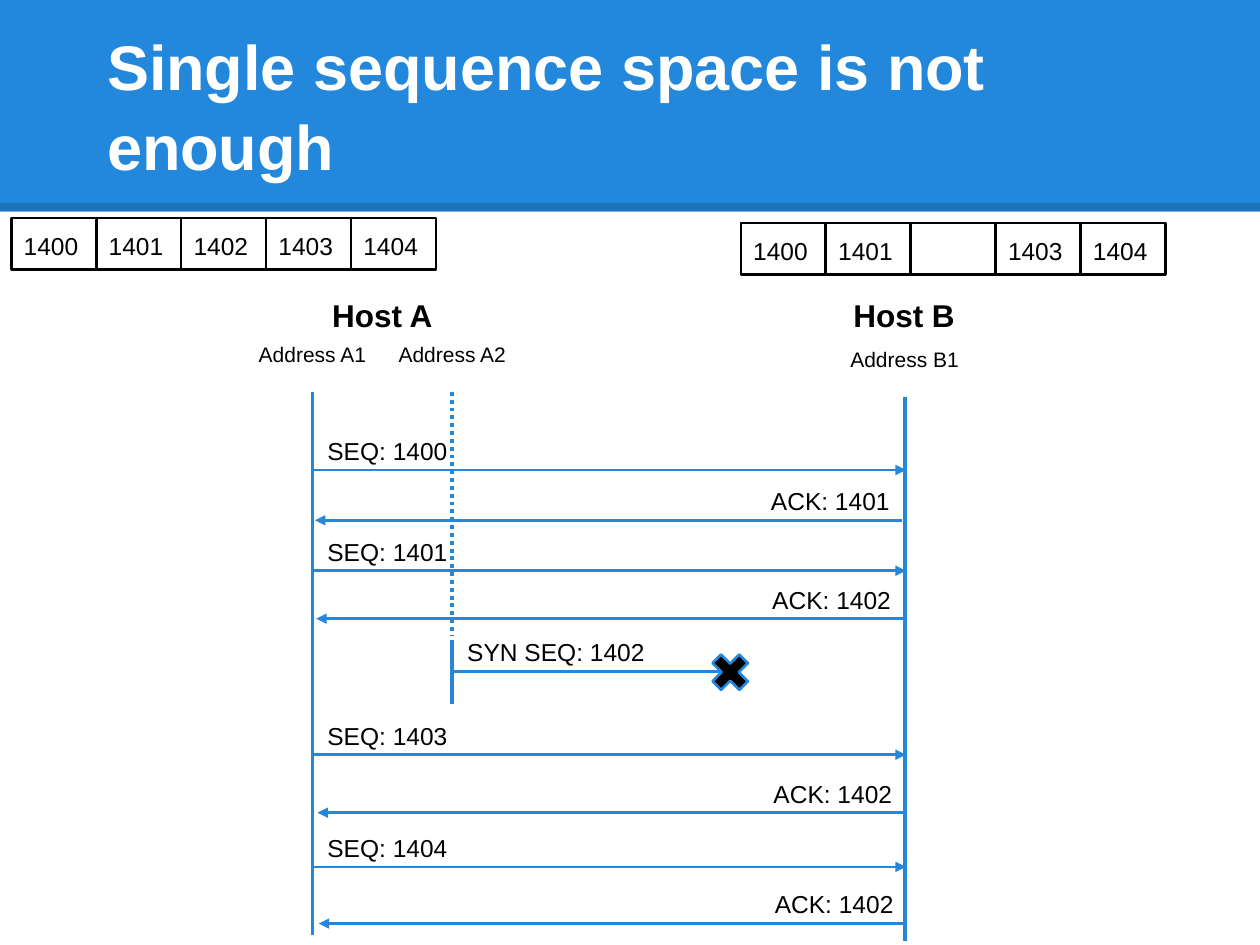
from dataclasses import dataclass

from lxml.etree import SubElement
from pptx import Presentation
from pptx.dml.color import RGBColor
from pptx.enum.dml import MSO_LINE
from pptx.enum.shapes import MSO_CONNECTOR, MSO_SHAPE
from pptx.enum.text import MSO_ANCHOR as Anchor, PP_ALIGN as Align
from pptx.oxml.ns import qn
from pptx.util import Inches, Pt


@dataclass(frozen=True)
class Theme:
    font: str = "Arial"
    blue: RGBColor = RGBColor(0x23, 0x88, 0xDB)
    black: RGBColor = RGBColor(0, 0, 0)
    white: RGBColor = RGBColor(255, 255, 255)
    title: int = 36
    host: int = 18
    message: int = 14
    address: int = 12
    thick: float = 2.25
    thin: float = 1.5


@dataclass(frozen=True)
class Box:
    """A rectangle in inches."""
    left: float
    top: float
    width: float
    height: float

    def lengths(self):
        return [Inches(n) for n in (self.left, self.top, self.width, self.height)]


THEME = Theme()


def format_text(frame, text, size, color=THEME.black, bold=False,
                align=Align.LEFT, anchor=Anchor.TOP):
    frame.word_wrap = True
    frame.vertical_anchor = anchor
    frame.margin_left = frame.margin_right = Inches(0.1)
    frame.margin_top = frame.margin_bottom = Inches(0.1)
    frame.text = text
    for paragraph in frame.paragraphs:
        paragraph.alignment = align
        font = paragraph.font
        font.name, font.size, font.bold = THEME.font, Pt(size), bold
        font.color.rgb = color


def add_label(shapes, box, text, size, **style):
    format_text(shapes.add_textbox(*box.lengths()).text_frame, text, size, **style)


def add_shape(shapes, kind, box, fill, line):
    shape = shapes.add_shape(kind, *box.lengths())
    shape.shadow.inherit = False
    if fill is None:
        shape.fill.background()
    else:
        shape.fill.solid()
        shape.fill.fore_color.rgb = fill
    if line is None:
        shape.line.fill.background()
    else:
        shape.line.color.rgb = line
        shape.line.width = Pt(THEME.thin)
    return shape


def add_line(shapes, start, end, width, color=THEME.blue):
    line = shapes.add_connector(MSO_CONNECTOR.STRAIGHT,
                                *[Inches(n) for n in (*start, *end)])
    line.line.color.rgb = color
    line.line.width = Pt(width)
    SubElement(line._element.spPr, qn("a:effectLst"))
    return line


def add_header(slide, box, text):
    """Blue band with a translucent lower edge, and the title on it."""
    band = add_shape(slide.shapes, MSO_SHAPE.RECTANGLE, box, THEME.blue, None)
    edge_y = box.top + box.height - 0.04
    edge = add_line(slide.shapes, (box.left, edge_y), (box.left + box.width, edge_y),
                    4.5, THEME.black)
    color = edge.line._get_or_add_ln().find(".//" + qn("a:srgbClr"))
    SubElement(color, qn("a:alpha"), val="15000")

    title = slide.shapes.title
    title.left, title.top, title.width, title.height = Box(
        box.left + 0.5, box.top + 0.3, box.width - 1, 1.25).lengths()
    format_text(title.text_frame, text, THEME.title, THEME.white, True,
                anchor=Anchor.BOTTOM)
    for paragraph in title.text_frame.paragraphs:
        paragraph.line_spacing = 1.05
        paragraph._p.get_or_add_pPr().set("indent", str(Inches(0.25)))
    # Send the band and its edge behind the title
    for shape in (edge, band):
        slide.shapes._spTree.insert(2, shape._element)


def add_buffer(slide, box, numbers):
    """Row of equal cells, one for each sequence number; None leaves a gap."""
    pitch = box.width / len(numbers)
    for column, number in enumerate(numbers):
        cell = Box(box.left + column * pitch, box.top, pitch, box.height)
        shape = add_shape(slide.shapes, MSO_SHAPE.RECTANGLE, cell, None, THEME.black)
        if number:
            format_text(shape.text_frame, str(number), THEME.message)


def add_host(slide, box, name, addresses):
    """Host name over its addresses, each given as (text, centre x)."""
    add_label(slide.shapes, Box(box.left, box.top, box.width, 0.5), name, THEME.host,
              bold=True, align=Align.CENTER, anchor=Anchor.MIDDLE)
    for text, center in addresses:
        add_label(slide.shapes, Box(center - 0.83, box.top + box.height - 0.5, 1.66, 0.5),
                  text, THEME.address, align=Align.CENTER)


def add_message(slide, start, end, y, text, label_width=4):
    """Arrow with its label above, set at the sender's end."""
    shapes = slide.shapes.add_group_shape().shapes
    arrow = add_line(shapes, (start, y), (end, y), THEME.thin)
    SubElement(arrow.line._get_or_add_ln(), qn("a:tailEnd"), type="triangle")
    forward = end > start
    left = start + 0.02 if forward else start - label_width
    add_label(shapes, Box(left, y - 0.37, label_width, 0.37), text, THEME.message,
              align=Align.LEFT if forward else Align.RIGHT)


def add_exchange(slide, box):
    """Time lines of the addresses and the messages between them."""
    a1, b1, bottom = box.left, box.left + box.width, box.top + box.height
    a2 = a1 + 1.11
    add_line(slide.shapes, (a1, box.top), (a1, bottom - 0.05), THEME.thick)
    add_line(slide.shapes, (b1, box.top + 0.04), (b1, bottom), THEME.thick)
    add_line(slide.shapes, (a2, box.top + 1.97), (a2, box.top + 2.48), THEME.thick)
    dotted = add_line(slide.shapes, (a2, box.top), (a2, box.top + 1.93), THEME.thick)
    dotted.line.dash_style = MSO_LINE.ROUND_DOT

    for number, offset in ((1400, 0.62), (1401, 1.42), (1403, 2.88), (1404, 3.77)):
        add_message(slide, a1, b1 + 0.01, box.top + offset, f"SEQ: {number}")
    acks = ((1401, 1.02), (1402, 1.8), (1402, 3.34), (1402, 4.22))
    for index, (number, offset) in enumerate(acks):
        start = b1 - 0.02 + index * 0.01
        add_message(slide, start, start - 4.66, box.top + offset, f"ACK: {number}")

    lost_y = box.top + 2.22
    add_message(slide, a2, a2 + 2.23, lost_y, "SYN SEQ: 1402", 2.12)
    add_shape(slide.shapes, MSO_SHAPE.MATH_MULTIPLY,
              Box(a2 + 2, lost_y - 0.2, 0.41, 0.41), THEME.black, THEME.blue)


def main():
    presentation = Presentation()
    presentation.slide_width, presentation.slide_height = Inches(10), Inches(7.5)
    slide = presentation.slides.add_slide(presentation.slide_layouts[5])

    add_header(slide, Box(0, 0, 10, 1.68), "Single sequence space is not\nenough")
    add_host(slide, Box(2.48, 2.25, 1.11, 0.86), "Host A",
             [("Address A1", 2.48), ("Address A2", 3.59)])
    add_host(slide, Box(6.53, 2.25, 1.29, 0.9), "Host B", [("Address B1", 7.18)])
    add_exchange(slide, Box(2.48, 3.11, 4.7, 4.36))
    add_buffer(slide, Box(0.09, 1.73, 3.37, 0.41), [1400, 1401, 1402, 1403, 1404])
    add_buffer(slide, Box(5.88, 1.77, 3.37, 0.41), [1400, 1401, None, 1403, 1404])

    presentation.save("out.pptx")


if __name__ == "__main__":
    main()
